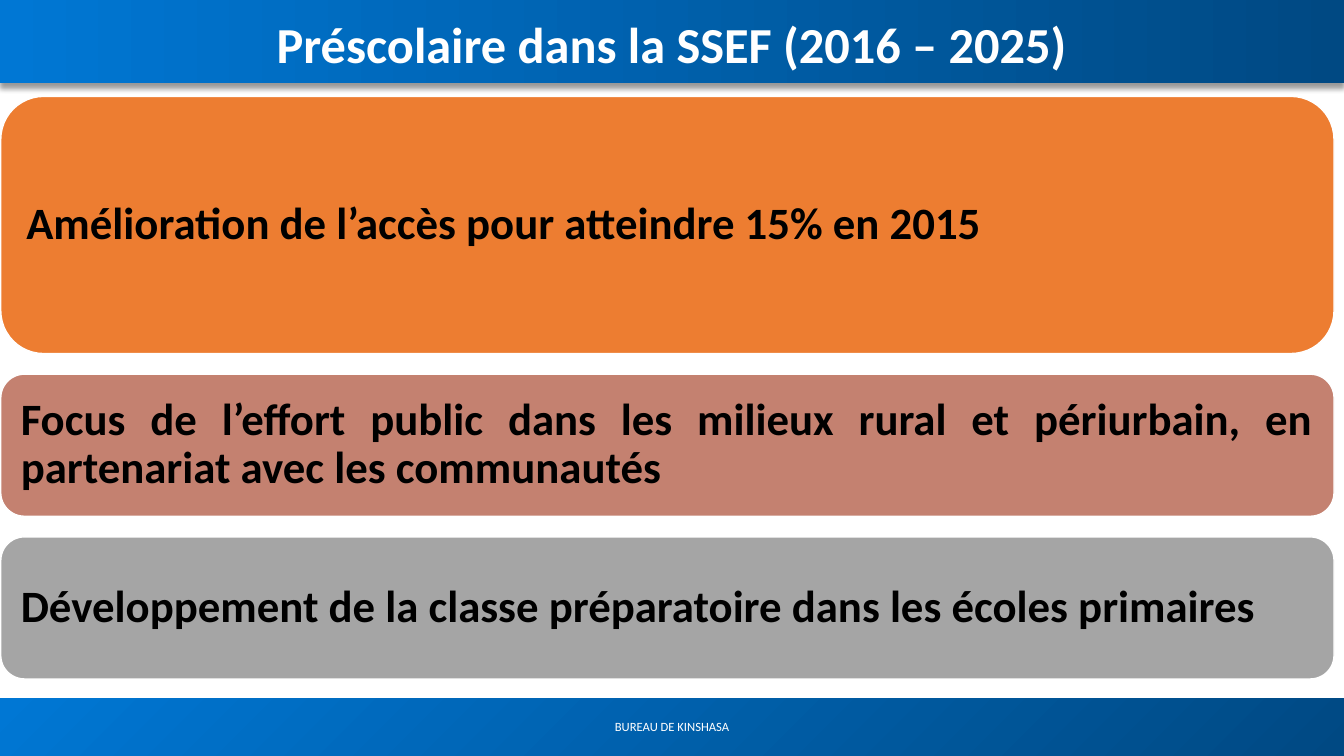
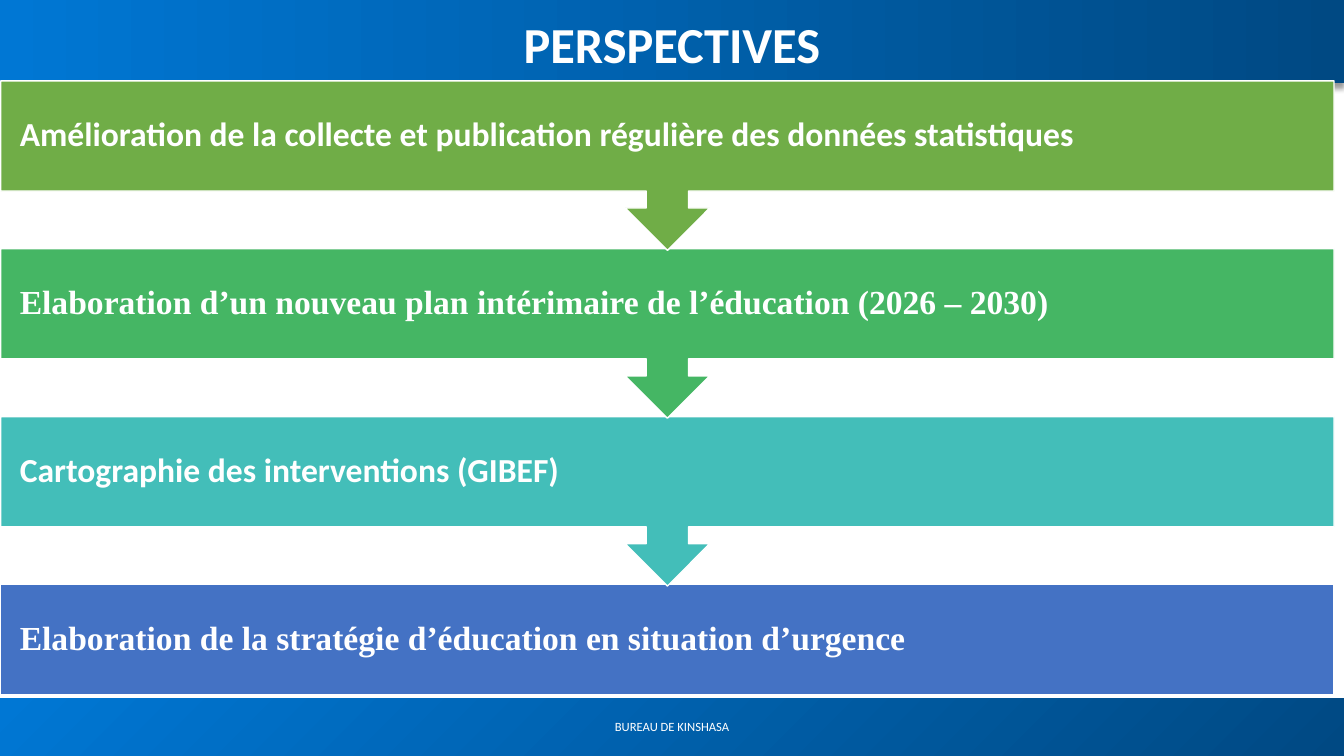
"""Build two slides on preschool strategy and its outlook."""
from lxml.etree import SubElement
from pptx import Presentation
from pptx.dml.color import RGBColor
from pptx.enum.shapes import MSO_SHAPE as Shape
from pptx.enum.text import MSO_ANCHOR as Anchor, PP_ALIGN as Align
from pptx.oxml.ns import qn
from pptx.util import Cm, Pt

WHITE = RGBColor(0xFF, 0xFF, 0xFF)
BLACK = RGBColor(0x00, 0x00, 0x00)
BLUE = RGBColor(0x00, 0x77, 0xD4)
NAVY = RGBColor(0x00, 0x49, 0x83)
ORANGE = RGBColor(0xED, 0x7D, 0x31)
ROSE = RGBColor(0xC4, 0x81, 0x70)
GREY = RGBColor(0xA5, 0xA5, 0xA5)
OLIVE = RGBColor(0x70, 0xAD, 0x47)
GREEN = RGBColor(0x45, 0xB6, 0x64)
TEAL = RGBColor(0x43, 0xBE, 0xB9)
ROYAL = RGBColor(0x44, 0x72, 0xC4)

SANS, SERIF = "Calibri", "Times New Roman"
WIDE, HIGH = 33.87, 19.05
LEFT, SPAN = 0.02, 33.6


def add_box(slide, kind, place, fills, text, size, color=WHITE, face=SANS,
            bold=True, align=Align.JUSTIFY, inset=0, angle=0):
    box = slide.shapes.add_shape(kind, *[Cm(n) for n in place])
    box.shadow.inherit = False
    if len(fills) == 1:
        box.fill.solid()
        box.fill.fore_color.rgb = fills[0]
        box.line.color.rgb = WHITE
        box.line.width = Pt(1)
    else:
        box.fill.gradient()
        box.fill.gradient_angle = angle
        for stop, tone in zip(box.fill.gradient_stops, fills):
            stop.color.rgb = tone
        box.line.fill.background()
    frame = box.text_frame
    frame.word_wrap = True
    frame.vertical_anchor = Anchor.MIDDLE
    frame.margin_left = frame.margin_right = Cm(inset)
    frame.margin_top = frame.margin_bottom = Cm(inset)
    par = frame.paragraphs[0]
    par.text = text
    par.alignment = align
    par.line_spacing = 0.9
    font = par.font
    font.name, font.size, font.bold = face, Pt(size), bold
    font.color.rgb = color
    return box


def add_page(deck, title):
    slide = deck.slides.add_slide(deck.slide_layouts[6])
    add_box(slide, Shape.RECTANGLE, (0, 17.6, WIDE, 1.45), (NAVY, BLUE),
            "BUREAU DE KINSHASA", 9, bold=False, align=Align.CENTER, angle=135)
    band = add_box(slide, Shape.RECTANGLE, (0, 0, WIDE, 2.1), (BLUE, NAVY),
                   title, 36, align=Align.CENTER)
    band.text_frame.paragraphs[0].line_spacing = 1.07
    effects = band._element.spPr.find(qn("a:effectLst"))
    shade = SubElement(effects, qn("a:outerShdw"), blurRad=str(Pt(4)),
                       dist=str(Pt(3)), dir="5400000", algn="t", rotWithShape="0")
    tone = SubElement(shade, qn("a:srgbClr"), val=str(BLACK))
    SubElement(tone, qn("a:alpha"), val="40000")
    return slide


deck = Presentation()
deck.slide_width, deck.slide_height = Cm(WIDE), Cm(HIGH)

slide = add_page(deck, "Préscolaire dans la SSEF (2016 – 2025)")
goals = [
    (6.48, ORANGE, "Amélioration de l’accès pour atteindre 15% en 2015"),
    (3.58, ROSE, "Focus de l’effort public dans les milieux rural et périurbain, "
                 "en partenariat avec les communautés"),
    (3.58, GREY, "Développement de la classe préparatoire dans les écoles primaires"),
]
top, gap = 2.43, 0.52
for high, fill, text in goals:
    add_box(slide, Shape.ROUNDED_RECTANGLE, (LEFT, top, SPAN, high), (fill,),
            text, 32, color=BLACK, inset=0.33)
    top += high + gap

slide = add_page(deck, "PERSPECTIVES")
steps = [
    (OLIVE, SANS, "Amélioration de la collecte et publication régulière des données statistiques"),
    (GREEN, SERIF, "Elaboration d’un nouveau plan intérimaire de l’éducation (2026 – 2030)"),
    (TEAL, SANS, "Cartographie des interventions (GIBEF)"),
    (ROYAL, SERIF, "Elaboration de la stratégie d’éducation en situation d’urgence"),
]
first, pitch = 2.04, 4.23
last = len(steps) - 1
for row, (fill, face, text) in reversed(list(enumerate(steps))):
    kind, high = (Shape.RECTANGLE, 2.77) if row == last else (Shape.DOWN_ARROW_CALLOUT, 4.27)
    add_box(slide, kind, (LEFT, first + row * pitch, SPAN, high), (fill,),
            text, 24, face=face, inset=0.48)

deck.save("out.pptx")
